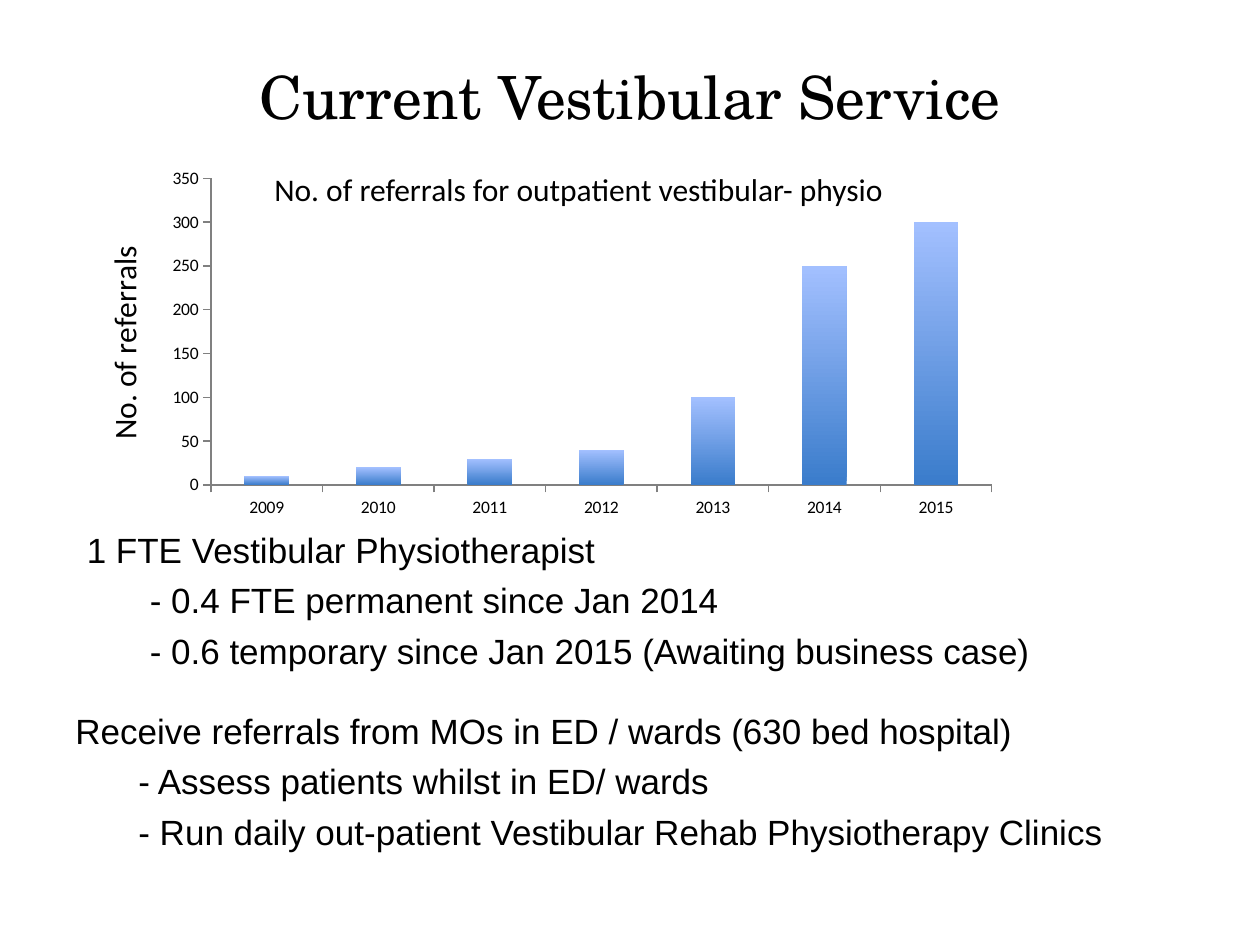
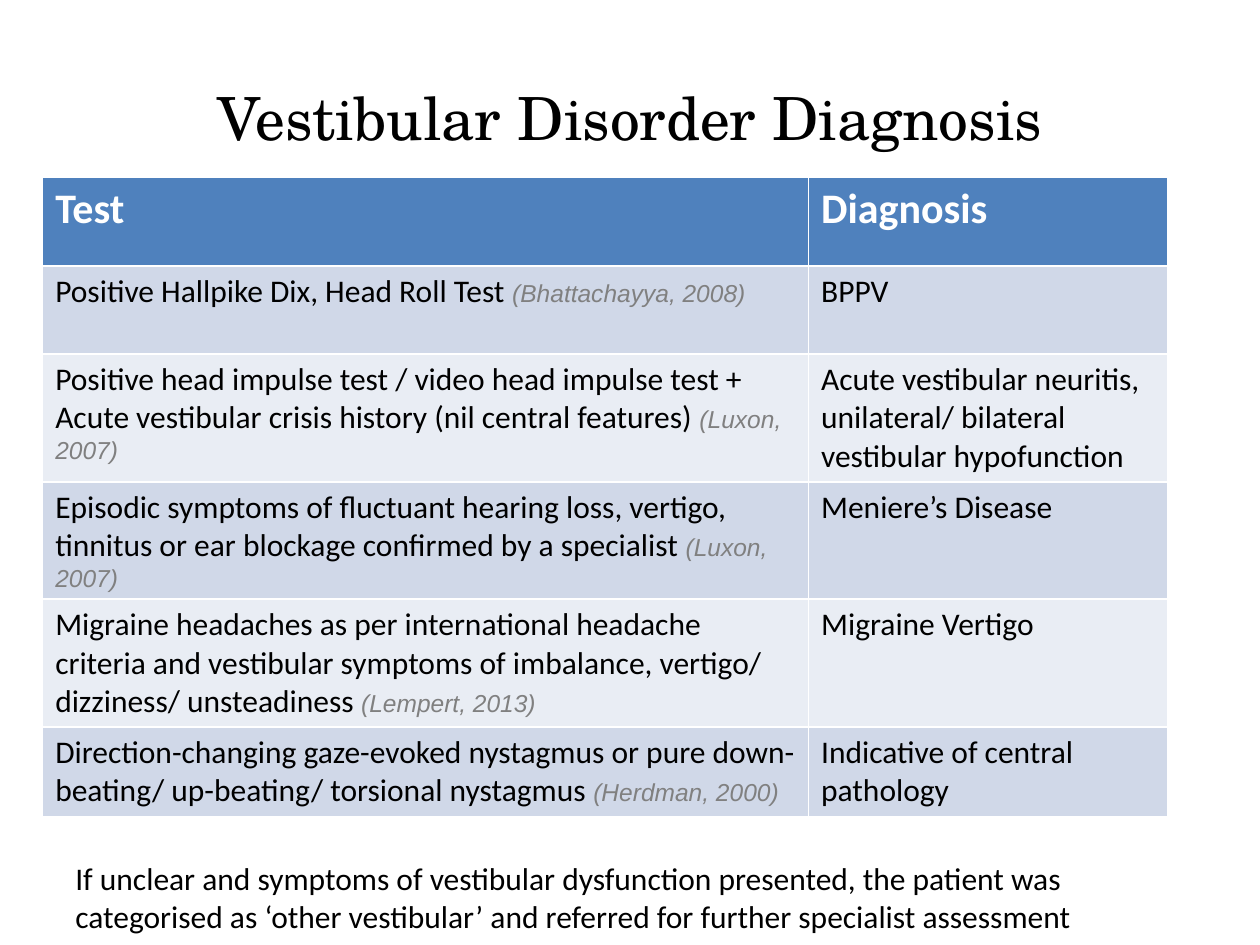
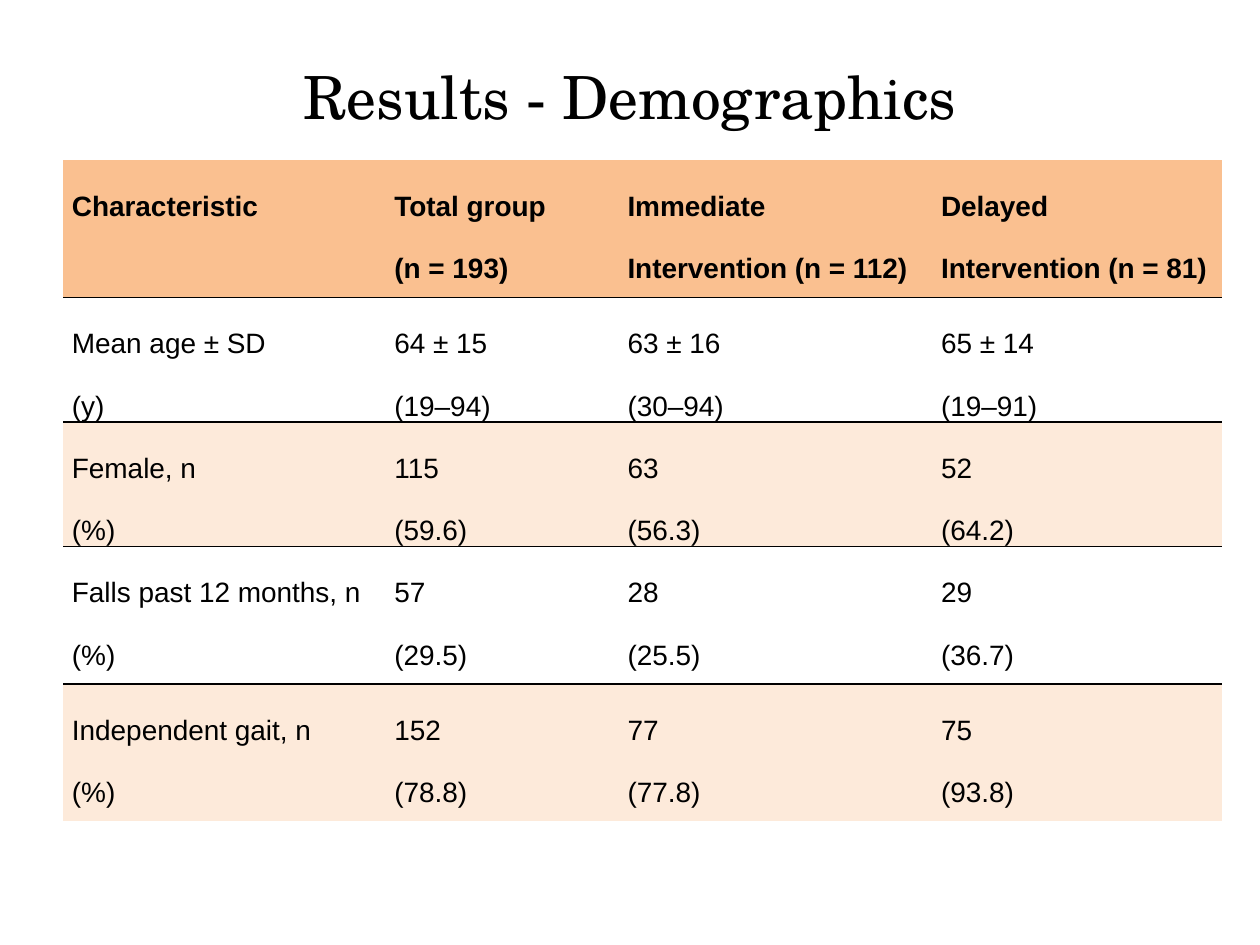
import lxml.etree
import pptx
import pptx.chart.data
import pptx.dml.color
import pptx.enum.chart
import pptx.enum.text
import pptx.oxml.ns
import pptx.util

Cm = pptx.util.Cm
Pt = pptx.util.Pt
RGBColor = pptx.dml.color.RGBColor
qn = pptx.oxml.ns.qn

BLACK = RGBColor(0x00, 0x00, 0x00)
WHITE = RGBColor(0xFF, 0xFF, 0xFF)
GREY = RGBColor(0x80, 0x80, 0x80)
BLUE = RGBColor(0x4F, 0x81, 0xBD)
BLUE_BANDS = [RGBColor(0xE9, 0xED, 0xF4), RGBColor(0xD0, 0xD8, 0xE8)]
BAR_BOTTOM = RGBColor(0x3A, 0x7C, 0xCB)
BAR_TOP = RGBColor(0xA3, 0xC0, 0xFF)
ORANGE = RGBColor(0xFA, 0xC0, 0x90)
ORANGE_BANDS = [RGBColor(0xFD, 0xEA, 0xDA), WHITE]

TITLE = {"name": "TeX Gyre Schola", "size": Pt(34), "color": BLACK}
BODY = {"name": "Arial", "size": Pt(20), "color": BLACK}
TEXT = {"name": "Calibri", "size": Pt(18), "color": BLACK, "bold": False}
CITATION = {"name": "Arial", "size": Pt(14), "color": GREY, "bold": False, "italic": True}
TEST_HEADER = {"name": "Calibri", "size": Pt(24), "color": WHITE, "bold": True}
RESULT = {"name": "Arial", "size": Pt(16), "color": BLACK, "bold": False}
RESULT_HEADER = {**RESULT, "bold": True}
TICK = {"name": "Calibri", "size": Pt(10), "color": BLACK}


def format_font(font, values):
    for name, value in values.items():
        if name == "color":
            font.color.rgb = value
        else:
            setattr(font, name, value)


def add_text(slide, left, top, width, height, lines, values, wrap):
    box = slide.shapes.add_textbox(Cm(left), Cm(top), Cm(width), Cm(height))
    frame = box.text_frame
    frame.word_wrap = wrap
    for index, line in enumerate(lines):
        paragraph = frame.paragraphs[0] if index == 0 else frame.add_paragraph()
        if index:
            paragraph.space_before = Pt(5)
        if line.startswith("- "):
            paragraph.level = 1
        run = paragraph.add_run()
        run.text = line
        format_font(run.font, values)
    for properties in box.element.iter(qn("a:pPr")):
        if properties.get("lvl"):
            properties.set("marL", str(Cm(1.27)))
            properties.set("indent", "0")


presentation = pptx.Presentation()
presentation.slide_width = Cm(25.4)
presentation.slide_height = Cm(19.05)

slides = []
for title, top in [
    ("Current Vestibular Service", 0.33),
    ("Vestibular Disorder Diagnosis", 0.76),
    ("Results - Demographics", 0.33),
]:
    slide = presentation.slides.add_slide(presentation.slide_layouts[5])
    shape = slide.shapes.title
    shape.left, shape.top, shape.width, shape.height = Cm(1.27), Cm(top), Cm(22.86), Cm(3.18)
    shape.text_frame.vertical_anchor = pptx.enum.text.MSO_ANCHOR.MIDDLE
    paragraph = shape.text_frame.paragraphs[0]
    paragraph.alignment = pptx.enum.text.PP_ALIGN.CENTER
    run = paragraph.add_run()
    run.text = title
    format_font(run.font, TITLE)
    slides.append(slide)
service_slide, diagnosis_slide, results_slide = slides

chart_data = pptx.chart.data.CategoryChartData()
chart_data.categories = [str(year) for year in range(2009, 2016)]
chart_data.add_series("Series 1", [10, 20, 30, 40, 100, 250, 300])
chart = service_slide.shapes.add_chart(
    pptx.enum.chart.XL_CHART_TYPE.COLUMN_CLUSTERED,
    Cm(1.5), Cm(3.25), Cm(18.87), Cm(7.32), chart_data,
).chart
chart.has_legend = False
chart.has_title = False
format_font(chart.font, TICK)
plot = chart.plots[0]
plot.gap_width = 150
plot.vary_by_categories = False
bar_fill = plot.series[0].format.fill
bar_fill.gradient()
bar_fill.gradient_angle = 90
for stop, color in zip(bar_fill.gradient_stops, [BAR_BOTTOM, BAR_TOP]):
    stop.color.rgb = color
for axis in [chart.category_axis, chart.value_axis]:
    axis.has_major_gridlines = False
    axis.major_tick_mark = pptx.enum.chart.XL_TICK_MARK.OUTSIDE
    axis.format.line.color.rgb = GREY
    axis.format.line.width = Pt(0.75)
referral_axis = chart.value_axis
referral_axis.minimum_scale = 0
referral_axis.maximum_scale = 350
referral_axis.major_unit = 50
run = referral_axis.axis_title.text_frame.paragraphs[0].add_run()
run.text = "No. of referrals"
format_font(run.font, TEXT)

add_text(service_slide, 1.5, 10.52, 22.86, 3.05, [
    "1 FTE Vestibular Physiotherapist",
    "- 0.4 FTE permanent since Jan 2014",
    "- 0.6 temporary since Jan 2015 (Awaiting business case)",
], BODY, True)
add_text(service_slide, 5.28, 3.3, 12.95, 1.02,
         ["No. of referrals for outpatient vestibular- physio"], TEXT, False)
add_text(service_slide, 1.27, 14.17, 21.39, 3.18, [
    "Receive referrals from MOs in ED / wards (630 bed hospital)",
    "- Assess patients whilst in ED/ wards",
    "- Run daily out-patient Vestibular Rehab Physiotherapy Clinics",
], BODY, False)

tests = [
    ("Test", "", "Diagnosis"),
    ("Positive Hallpike Dix, Head Roll Test ", "(Bhattachayya, 2008)", "BPPV"),
    ("Positive head impulse test / video head impulse test + Acute vestibular crisis history "
     "(nil central features) ", "(Luxon, 2007)",
     "Acute vestibular neuritis, unilateral/ bilateral vestibular hypofunction"),
    ("Episodic symptoms of fluctuant hearing loss, vertigo, tinnitus or ear blockage "
     "confirmed by a specialist ", "(Luxon, 2007)", "Meniere’s Disease"),
    ("Migraine headaches as per international headache criteria and vestibular symptoms of "
     "imbalance, vertigo/ dizziness/ unsteadiness ", "(Lempert, 2013)", "Migraine Vertigo"),
    ("Direction-changing gaze-evoked nystagmus or pure down-beating/ up-beating/ torsional "
     "nystagmus ", "(Herdman, 2000)", "Indicative of central pathology"),
]
table = diagnosis_slide.shapes.add_table(
    len(tests), 2, Cm(0.86), Cm(3.58), Cm(22.68), Cm(10.68)).table
for column, width in zip(table.columns, [15.44, 7.24]):
    column.width = Cm(width)
for row_index, (test, citation, diagnosis) in enumerate(tests):
    table.rows[row_index].height = Cm(1.78)
    values = TEXT if row_index else TEST_HEADER
    for column_index, runs in enumerate([[(test, values), (citation, CITATION)],
                                         [(diagnosis, values)]]):
        cell = table.cell(row_index, column_index)
        cell.fill.solid()
        cell.fill.fore_color.rgb = BLUE_BANDS[row_index % 2] if row_index else BLUE
        for text, run_values in runs:
            if text:
                run = cell.text_frame.paragraphs[0].add_run()
                run.text = text
                format_font(run.font, run_values)

add_text(diagnosis_slide, 1.27, 17.2, 22.25, 2.57, [
    "If unclear and symptoms of vestibular dysfunction presented, the patient was categorised "
    "as ‘other vestibular’ and referred for further specialist assessment",
], TEXT, True)

results = [
    ["Characteristic", "Total group\n(n = 193)", "Immediate\nIntervention (n = 112)",
     "Delayed\nIntervention (n = 81)"],
    ["Mean age ± SD\n(y)", "64 ± 15\n(19–94)", "63 ± 16\n(30–94)", "65 ± 14\n(19–91)"],
    ["Female, n\n(%)", "115\n(59.6)", "63\n(56.3)", "52\n(64.2)"],
    ["Falls past 12 months, n\n(%)", "57\n(29.5)", "28\n(25.5)", "29\n(36.7)"],
    ["Independent gait, n\n(%)", "152\n(78.8)", "77\n(77.8)", "75\n(93.8)"],
]
table_frame = results_slide.shapes.add_table(
    len(results), 4, Cm(1.27), Cm(3.23), Cm(23.37), Cm(11.05))
table = table_frame.table
for style in table_frame.element.iter(qn("a:tableStyleId")):
    style.text = "{2D5ABB26-0587-4C30-8999-92F81FD0307C}"
for column, width in zip(table.columns, [6.5, 4.7, 6.32, 5.85]):
    column.width = Cm(width)
for row, height in zip(table.rows, [2.77, 1.37, 1.37, 2.77, 2.77]):
    row.height = Cm(height)
for row_index, texts in enumerate(results):
    for column_index, text in enumerate(texts):
        cell = table.cell(row_index, column_index)
        cell.margin_left = cell.margin_right = Cm(0.18)
        cell.margin_top = cell.margin_bottom = 0
        cell.fill.solid()
        cell.fill.fore_color.rgb = ORANGE_BANDS[row_index % 2] if row_index else ORANGE
        cell.text = text
        for paragraph in cell.text_frame.paragraphs:
            paragraph.line_spacing = 2.0
            for run in paragraph.runs:
                format_font(run.font, RESULT if row_index else RESULT_HEADER)
for row_index, row in enumerate(table_frame.element.iter(qn("a:tr"))):
    edges = ["a:lnB"] * (row_index < len(results) - 1) + ["a:lnT"] * (row_index > 0)
    for properties in row.iter(qn("a:tcPr")):
        for edge in edges:
            line = lxml.etree.Element(qn(edge), w=str(Pt(1)))
            fill = lxml.etree.SubElement(line, qn("a:solidFill"))
            lxml.etree.SubElement(fill, qn("a:srgbClr"), val=str(BLACK))
            properties.insert(0, line)

presentation.save("out.pptx")
